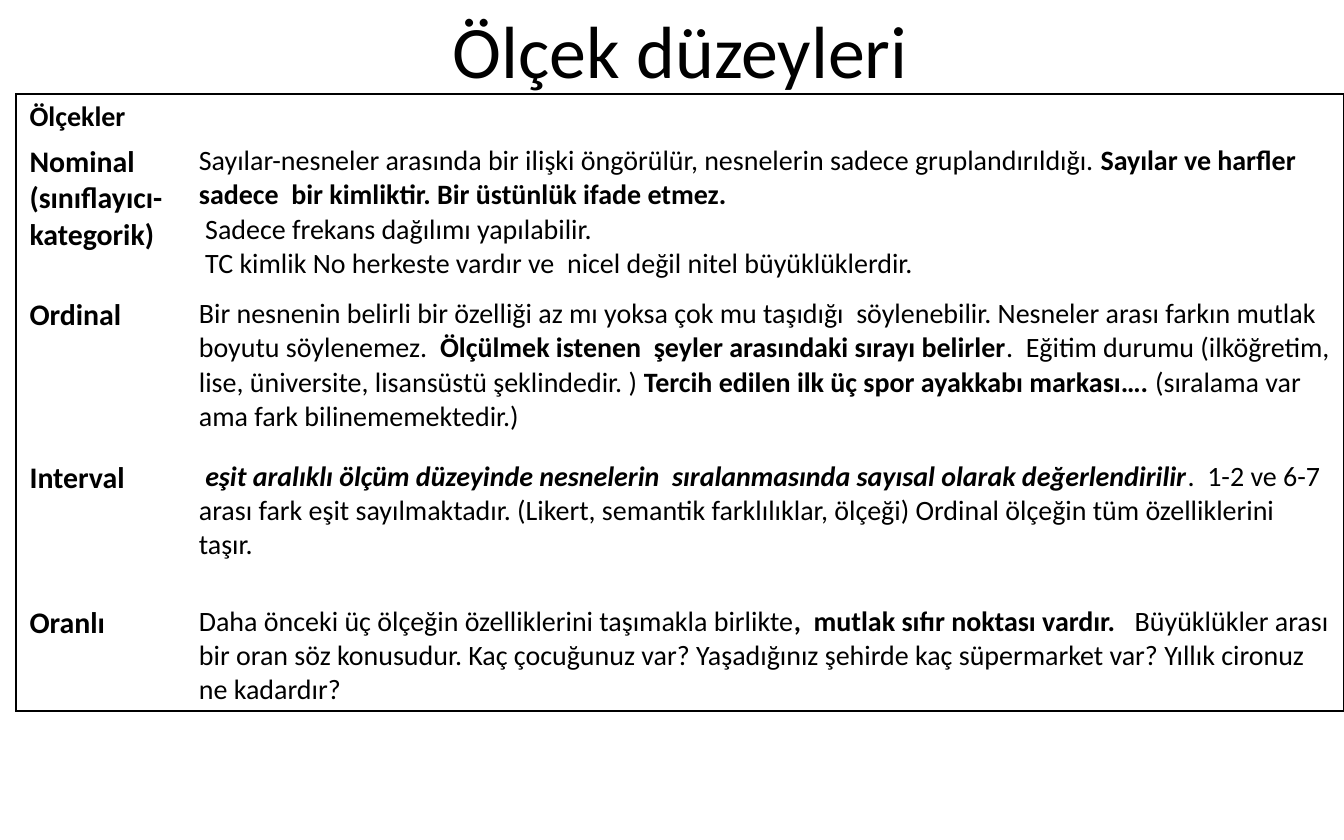
from lxml.etree import SubElement
from pptx import Presentation
from pptx.dml.color import RGBColor as RGB
from pptx.enum.text import MSO_ANCHOR as ANCHOR, PP_ALIGN as ALIGN
from pptx.oxml.ns import qn
from pptx.util import Inches, Pt

COLORS = {"ink": "000000", "paper": "FFFFFF"}
W, H = Inches(10), Inches(6.25)
COLS = [1.26, 8.62]
ROWS = [0.33, 1.14, 1.21, 1.08, 0.83]
STYLES = {
    "label": {"size": Pt(16), "bold": True, "italic": False},
    "plain": {"size": Pt(15), "bold": False, "italic": False},
    "bold": {"size": Pt(15), "bold": True, "italic": False},
    "both": {"size": Pt(15), "bold": True, "italic": True},
    "title": {"size": Pt(39.6), "bold": False, "italic": False},
}
SCALES = [
    [[[("Ölçekler", "bold")]], []],
    [
        [[("Nominal", "label")], [("(sınıflayıcı-kategorik)", "label")]],
        [
            [
                ("Sayılar-nesneler arasında bir ilişki öngörülür, nesnelerin sadece gruplandırıldığı. ", "plain"),
                ("Sayılar ve harfler sadece  bir kimliktir. Bir üstünlük ifade etmez.", "bold"),
            ],
            [(" Sadece frekans dağılımı yapılabilir.", "plain")],
            [(" TC kimlik No herkeste vardır ve  nicel değil nitel büyüklüklerdir.", "plain")],
        ],
    ],
    [
        [[("Ordinal", "label")]],
        [[
            ("Bir nesnenin belirli bir özelliği az mı yoksa çok mu taşıdığı  söylenebilir. "
             "Nesneler arası farkın mutlak boyutu söylenemez.  ", "plain"),
            ("Ölçülmek istenen  şeyler arasındaki sırayı belirler", "bold"),
            (".  Eğitim durumu (ilköğretim, lise, üniversite, lisansüstü şeklindedir. ) ", "plain"),
            ("Tercih edilen ilk üç spor ayakkabı markası…. ", "bold"),
            ("(sıralama var ama fark bilinememektedir.)", "plain"),
        ]],
    ],
    [
        [[("Interval", "label")]],
        [[
            (" ", "plain"),
            ("eşit aralıklı ölçüm düzeyinde nesnelerin  sıralanmasında sayısal olarak değerlendirilir", "both"),
            (".  1-2 ve 6-7 arası fark eşit sayılmaktadır. (Likert, semantik farklılıklar, ölçeği) "
             "Ordinal ölçeğin tüm özelliklerini taşır.", "plain"),
        ]],
    ],
    [
        [[("Oranlı", "label")]],
        [[
            ("Daha önceki üç ölçeğin özelliklerini taşımakla birlikte", "plain"),
            (",  mutlak sıfır noktası vardır.   ", "bold"),
            ("Büyüklükler arası bir oran söz konusudur. Kaç çocuğunuz var? "
             "Yaşadığınız şehirde kaç süpermarket var? Yıllık cironuz ne kadardır?", "plain"),
        ]],
    ],
]


def write(tf, paragraphs):
    for i, runs in enumerate(paragraphs):
        p = tf.paragraphs[0] if i == 0 else tf.add_paragraph()
        for text, style in runs:
            r = p.add_run()
            r.text = text
            r.font.name = "Calibri"
            r.font.color.rgb = RGB.from_string(COLORS["ink"])
            for key, value in STYLES[style].items():
                setattr(r.font, key, value)


def border(cell, sides):
    tcPr = cell._tc.get_or_add_tcPr()
    for side in "LRTB":
        ln = SubElement(tcPr, qn("a:ln" + side), w=str(Pt(1)))
        if side in sides:
            fill = SubElement(ln, qn("a:solidFill"))
            SubElement(fill, qn("a:srgbClr"), val=COLORS["ink"])
        else:
            SubElement(ln, qn("a:noFill"))


prs = Presentation()
prs.slide_width, prs.slide_height = W, H
s = prs.slides.add_slide(prs.slide_layouts[6])
s.background.fill.solid()
s.background.fill.fore_color.rgb = RGB.from_string(COLORS["paper"])

sp = s.shapes.add_textbox(int(W * 0.05), int(H * -0.005), int(W * 0.9), int(H * 0.127))
tf = sp.text_frame
tf.word_wrap = True
tf.vertical_anchor = ANCHOR.MIDDLE
write(tf, [[(" Ölçek düzeyleri", "title")]])
tf.paragraphs[0].alignment = ALIGN.CENTER

frame = s.shapes.add_table(len(ROWS), len(COLS), int(W * 0.012), int(H * 0.112),
                           Inches(sum(COLS)), Inches(sum(ROWS)))
table = frame.table
table.first_row = table.horz_banding = False
for col, width in zip(table.columns, COLS):
    col.width = Inches(width)
for row, height in zip(table.rows, ROWS):
    row.height = Inches(height)

margins = {"margin_left": 0.1, "margin_right": 0.1, "margin_top": 0.04, "margin_bottom": 0.04}
for y, scale in enumerate(SCALES):
    for x, paragraphs in enumerate(scale):
        cell = table.cell(y, x)
        for key, value in margins.items():
            setattr(cell, key, Inches(value))
        write(cell.text_frame, paragraphs)
        if not paragraphs:
            SubElement(cell.text_frame.paragraphs[0]._p, qn("a:endParaRPr"), sz="1500")
        sides = "LR"[x]
        if y == 0:
            sides += "T"
        if y == len(ROWS) - 1:
            sides += "B"
        border(cell, sides)
        cell.fill.background()

prs.save("out.pptx")
